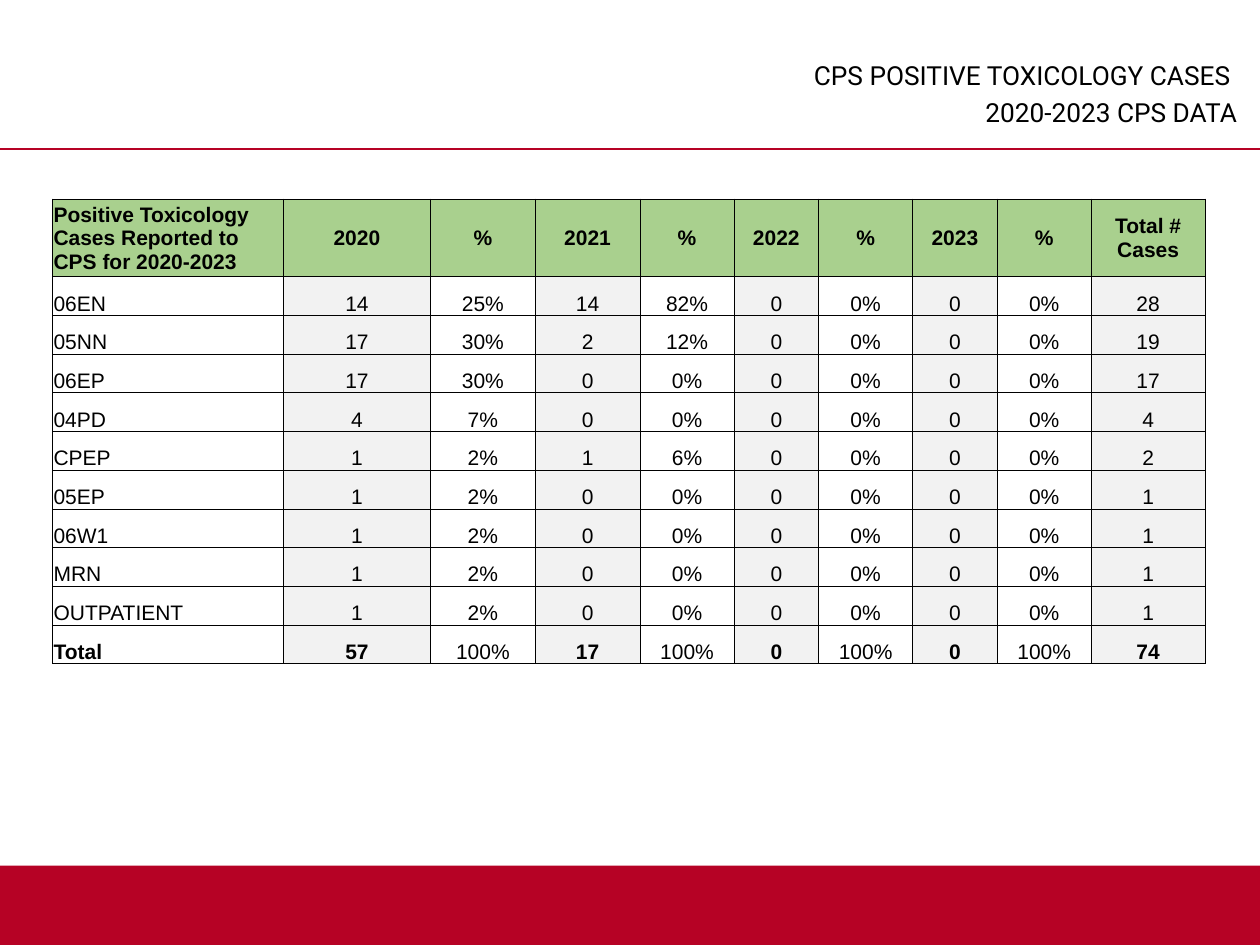
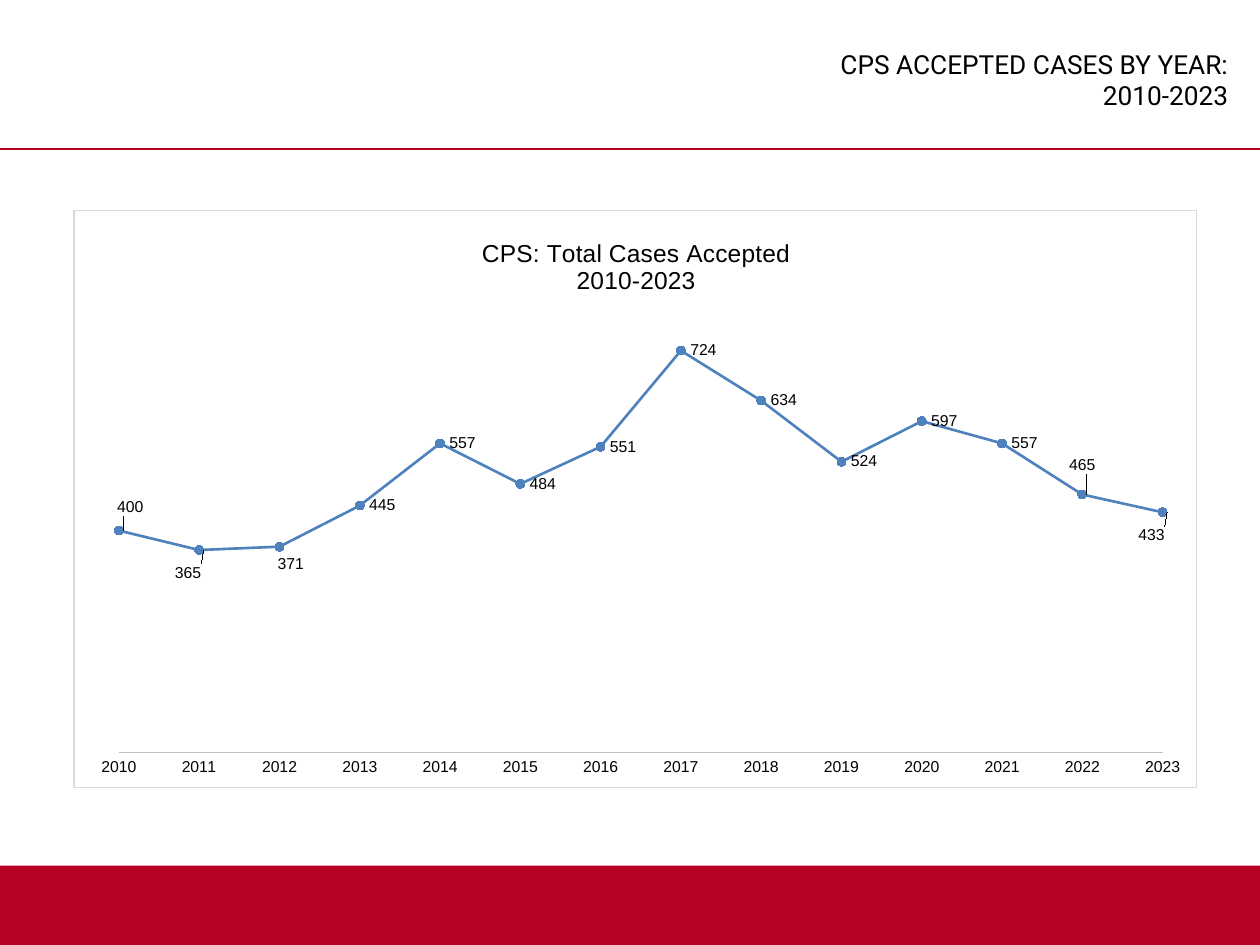
import pptx
import pptx.chart.data
import pptx.dml.color
import pptx.enum.chart
import pptx.enum.shapes
import pptx.enum.text
import pptx.oxml
import pptx.oxml.ns
import pptx.util

Cm, Pt = pptx.util.Cm, pptx.util.Pt
ALIGN = pptx.enum.text.PP_ALIGN
ANCHOR = pptx.enum.text.MSO_ANCHOR
qn = pptx.oxml.ns.qn

COLORS = {
    "crimson": "B60225", "black": "000000", "header": "A9D08E",
    "count": "F2F2F2", "series": "4F81BD", "axis": "BFBFBF", "frame": "D9D9D9",
}
SLIDE_W, SLIDE_H = 25.4, 19.05
TITLE_FONT = {"name": "Roboto", "size": Pt(15)}
CELL_FONT = {"name": "Arial", "size": Pt(12)}
LABEL_FONT = {"name": "Arial", "size": Pt(9)}
CHART_TITLE_FONT = {"name": "Arial", "size": Pt(14), "bold": False}

# Positive toxicology cases per unit, one count for each year
YEARS = [2020, 2021, 2022, 2023]
UNIT_CASES = {
    "06EN": [14, 14, 0, 0], "05NN": [17, 2, 0, 0], "06EP": [17, 0, 0, 0],
    "04PD": [4, 0, 0, 0], "CPEP": [1, 1, 0, 0], "05EP": [1, 0, 0, 0],
    "06W1": [1, 0, 0, 0], "MRN": [1, 0, 0, 0], "OUTPATIENT": [1, 0, 0, 0],
}
COL_WIDTHS = [4.65, 2.97, 2.11, 2.11, 1.9, 1.7, 1.9, 1.7, 1.9, 2.29]
HEADER_H, ROW_H = 1.57, 0.78

# Accepted cases from 2010 on; moved labels are offsets in shares of the chart
FIRST_YEAR = 2010
ACCEPTED = [400, 365, 371, 445, 557, 484, 551, 724, 634, 524, 597, 557, 465, 433]
MOVED_LABELS = {0: (-0.01, -0.04), 1: (-0.03, 0.04), 2: (-0.01, 0.03),
                12: (-0.02, -0.05), 13: (-0.03, 0.04)}


def rgb(name):
    return pptx.dml.color.RGBColor.from_string(COLORS[name])


def set_attrs(obj, values):
    for name, value in values.items():
        setattr(obj, name, value)


def set_font(font, values):
    set_attrs(font, values)
    font.color.rgb = rgb("black")


def set_line(line, color, width):
    line.color.rgb = rgb(color)
    line.width = Pt(width)


def line_xml(tag, color, width):
    return pptx.oxml.parse_xml(
        f'<a:{tag} {pptx.oxml.ns.nsdecls("a")} w="{int(Pt(width))}"><a:solidFill>'
        f'<a:srgbClr val="{COLORS[color]}"/></a:solidFill></a:{tag}>')


def add_frame(s):
    """Footer band and the rule under the title."""
    band = s.shapes.add_shape(pptx.enum.shapes.MSO_SHAPE.RECTANGLE,
                              0, Cm(17.45), Cm(SLIDE_W), Cm(SLIDE_H - 17.45))
    band.shadow.inherit = False
    band.fill.solid()
    band.fill.fore_color.rgb = rgb("crimson")
    band.line.fill.background()

    rule = s.shapes.add_connector(pptx.enum.shapes.MSO_CONNECTOR.STRAIGHT,
                                  0, Cm(3), Cm(SLIDE_W), Cm(3))
    set_line(rule.line, "crimson", 1)
    rule._element.spPr.append(pptx.oxml.parse_xml(
        f'<a:effectLst {pptx.oxml.ns.nsdecls("a")}/>'))


def add_title(s, box, lines):
    tf = s.shapes.add_textbox(*map(Cm, box)).text_frame
    set_attrs(tf, {"word_wrap": True, "margin_left": 0, "margin_right": 0,
                   "margin_top": Cm(0.13), "margin_bottom": Cm(0.13)})
    for i, text in enumerate(lines):
        p = tf.paragraphs[0] if i == 0 else tf.add_paragraph()
        p.alignment = ALIGN.RIGHT
        p.space_before = Pt(3 if i else 0)
        # Hanging indent
        pPr = p._p.get_or_add_pPr()
        pPr.set("marL", str(int(Cm(0.95))))
        pPr.set("indent", str(-int(Cm(0.95))))
        r = p.add_run()
        r.text = text
        set_font(r.font, TITLE_FONT)


def toxicology_rows():
    """Header, one row per unit and the total row, as text."""
    totals = [sum(counts) for counts in zip(*UNIT_CASES.values())]
    header = ["Positive Toxicology Cases Reported to CPS for 2020-2023"]
    for year in YEARS:
        header += [str(year), "%"]
    rows = [header + ["Total # Cases"]]
    for unit, counts in UNIT_CASES.items():
        row = [unit]
        for n, total in zip(counts, totals):
            row += [str(n), f"{n / total if total else 0:.0%}"]
        rows.append(row + [str(sum(counts))])
    total_row = ["Total"]
    for total in totals:
        total_row += [str(total), "100%"]
    return rows + [total_row + [str(sum(totals))]]


def fill_cell(cell, text, fill, bold, align, anchor):
    set_attrs(cell, {"margin_left": Cm(0.02), "margin_right": Cm(0.02),
                     "margin_top": Cm(0.02), "margin_bottom": 0,
                     "vertical_anchor": anchor})
    if fill:
        cell.fill.solid()
        cell.fill.fore_color.rgb = rgb(fill)
    else:
        cell.fill.background()
    tcPr = cell._tc.get_or_add_tcPr()
    for i, side in enumerate(["lnL", "lnR", "lnT", "lnB"]):
        tcPr.insert(i, line_xml(side, "black", 0.5))
    p = cell.text_frame.paragraphs[0]
    p.alignment = align
    r = p.add_run()
    r.text = text
    set_font(r.font, {**CELL_FONT, "bold": bold})


def add_toxicology_table(s, left, top):
    rows = toxicology_rows()
    heights = [HEADER_H] + [ROW_H] * (len(rows) - 1)
    table = s.shapes.add_table(len(rows), len(COL_WIDTHS), Cm(left), Cm(top),
                               Cm(sum(COL_WIDTHS)), Cm(sum(heights))).table
    set_attrs(table, {"first_row": False, "horz_banding": False})
    for col, width in zip(table.columns, COL_WIDTHS):
        col.width = Cm(width)
    for row, height in zip(table.rows, heights):
        row.height = Cm(height)
    for i, row in enumerate(rows):
        is_header, is_total = i == 0, i == len(rows) - 1
        for j, text in enumerate(row):
            is_count = j % 2 == 1
            fill = "header" if is_header else "count" if is_count else None
            bold = is_header or is_total and (is_count or j == 0)
            fill_cell(table.cell(i, j), text, fill, bold,
                      ALIGN.CENTER if j else ALIGN.LEFT,
                      ANCHOR.MIDDLE if is_header else ANCHOR.BOTTOM)


def set_layout(parent, index, values):
    """Give a chart part a manual layout as its child number index."""
    for old in parent.findall(qn("c:layout")):
        parent.remove(old)
    items = "".join(f'<c:{k} val="{v}"/>' for k, v in values.items())
    parent.insert(index, pptx.oxml.parse_xml(
        f'<c:layout {pptx.oxml.ns.nsdecls("c")}><c:manualLayout>{items}'
        '</c:manualLayout></c:layout>'))


def style_axes(chart):
    ticks = pptx.enum.chart.XL_TICK_MARK
    years, cases = chart.category_axis, chart.value_axis
    set_attrs(years, {
        "minimum_scale": FIRST_YEAR, "maximum_scale": FIRST_YEAR + len(ACCEPTED) - 1,
        "major_unit": 1, "has_major_gridlines": False,
        "major_tick_mark": ticks.NONE, "minor_tick_mark": ticks.NONE})
    set_attrs(years.tick_labels, {"number_format": "0", "number_format_is_linked": False})
    set_font(years.tick_labels.font, LABEL_FONT)
    set_line(years.format.line, "axis", 0.75)
    set_attrs(cases, {"minimum_scale": 0, "maximum_scale": 800,
                      "has_major_gridlines": False, "visible": False})


def style_series(series):
    set_line(series.format.line, "series", 1.5)
    marker = series.marker
    set_attrs(marker, {"style": pptx.enum.chart.XL_MARKER_STYLE.CIRCLE, "size": 5})
    marker.format.fill.solid()
    marker.format.fill.fore_color.rgb = rgb("series")
    set_line(marker.format.line, "series", 0.75)

    # A value label at every point
    for i in range(len(ACCEPTED)):
        label = series.points[i].data_label
        set_font(label.font, LABEL_FONT)
        label.position = pptx.enum.chart.XL_LABEL_POSITION.RIGHT

    # XY series have no public smooth setting
    for smooth in series._element.findall(qn("c:smooth")):
        smooth.set("val", "0")


def add_accepted_chart(s, box):
    data = pptx.chart.data.XyChartData()
    points = data.add_series("Series 1")
    for year, n in enumerate(ACCEPTED, FIRST_YEAR):
        points.add_data_point(year, n)
    chart = s.shapes.add_chart(pptx.enum.chart.XL_CHART_TYPE.XY_SCATTER_LINES,
                               *map(Cm, box), data).chart
    set_font(chart.font, {"name": "Arial", "size": Pt(10)})
    chart.has_legend = False
    plot = chart.plots[0]
    plot.vary_by_categories = False
    style_axes(chart)
    style_series(plot.series[0])

    # Title
    chart.has_title = True
    tf = chart.chart_title.text_frame
    for i, text in enumerate(["CPS: Total Cases Accepted", "2010-2023"]):
        p = tf.paragraphs[0] if i == 0 else tf.add_paragraph()
        r = p.add_run()
        r.text = text
        set_font(r.font, CHART_TITLE_FONT)

    # Placement of title, plot and moved labels, and the outer border
    root = chart.element
    set_layout(root.find(".//" + qn("c:title")), 1,
               {"xMode": "edge", "yMode": "edge", "x": 0.36, "y": 0.04})
    set_layout(root.find(".//" + qn("c:plotArea")), 0,
               {"layoutTarget": "inner", "xMode": "edge", "yMode": "edge",
                "x": 0.04, "y": 0.17, "w": 0.93, "h": 0.77})
    for i, label in enumerate(root.iter(qn("c:dLbl"))):
        if i in MOVED_LABELS:
            x, y = MOVED_LABELS[i]
            set_layout(label, 1, {"x": x, "y": y})
    border = pptx.oxml.parse_xml(f'<c:spPr {pptx.oxml.ns.nsdecls("c", "a")}/>')
    border.append(line_xml("ln", "frame", 0.75))
    root.find(qn("c:chart")).addnext(border)


def add_slide(prs, title_box, title_lines):
    s = prs.slides.add_slide(prs.slide_layouts[6])
    add_frame(s)
    add_title(s, title_box, title_lines)
    return s


def main():
    prs = pptx.Presentation()
    set_attrs(prs, {"slide_width": Cm(SLIDE_W), "slide_height": Cm(SLIDE_H)})

    s = add_slide(prs, (13.97, 1.07, 10.97, 1.47),
                  ["CPS POSITIVE TOXICOLOGY CASES ", "2020-2023 CPS DATA"])
    add_toxicology_table(s, 1.06, 4.01)

    s = add_slide(prs, (16.51, 0.84, 8.25, 1.07),
                  ["CPS ACCEPTED CASES BY YEAR: 2010-2023"])
    add_accepted_chart(s, (1.48, 4.23, 22.65, 11.66))

    prs.save("out.pptx")


if __name__ == "__main__":
    main()
